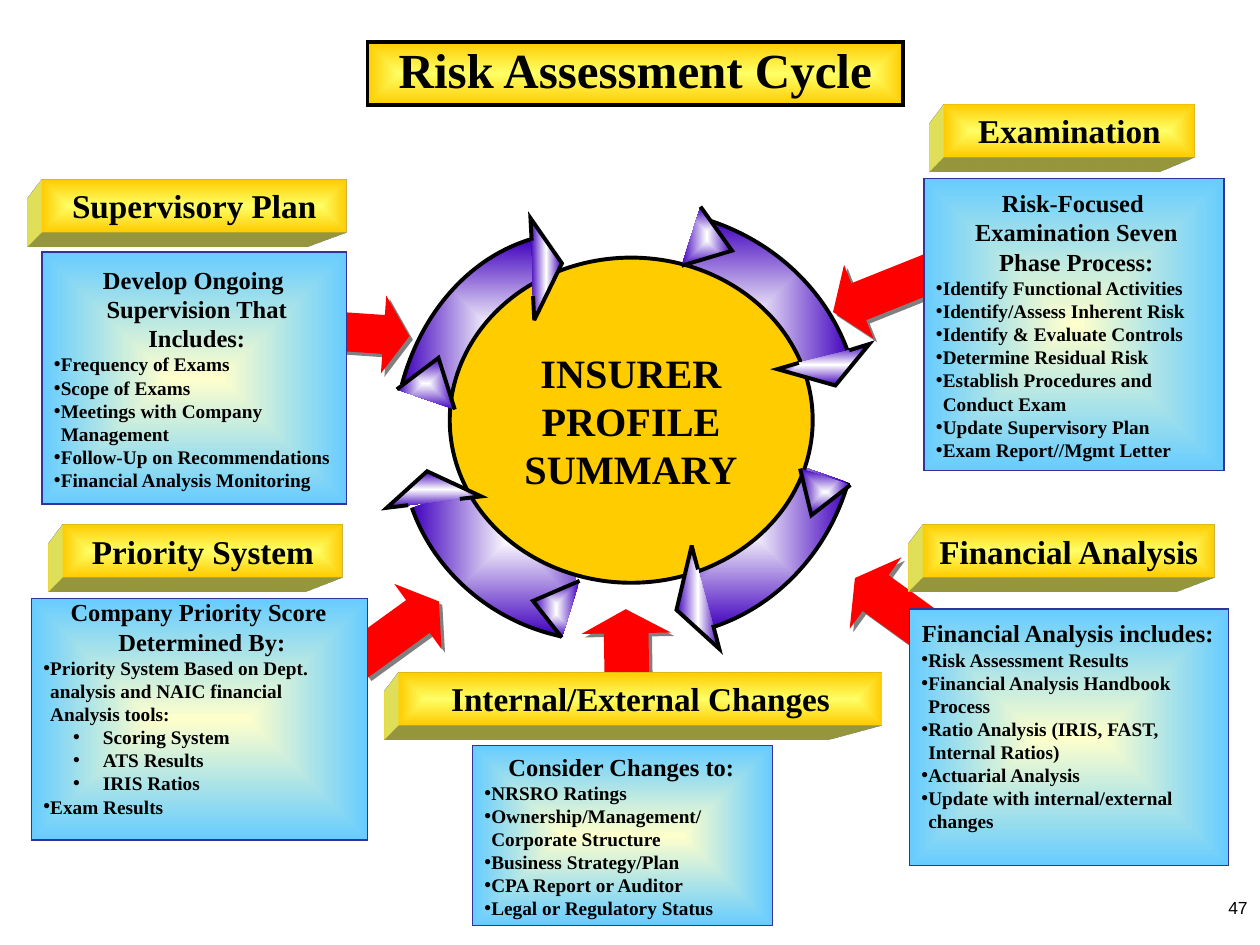
"""Build the Risk Assessment Cycle slide."""
from copy import deepcopy
from lxml.etree import SubElement
from pptx import Presentation
from pptx.dml.color import RGBColor
from pptx.enum.shapes import MSO_SHAPE
from pptx.enum.text import MSO_ANCHOR, PP_ALIGN
from pptx.oxml.ns import qn
from pptx.util import Pt

COLORS = {
    "black": "000000", "red": "FF0000", "gold": "FFCC00", "lemon": "FFFF66",
    "cream": "FFFFCC", "sky": "66CCFF", "navy": "333399", "white": "FFFFFF",
    "violet": "4000BD", "shadow": "808080",
}
SERIF = "Times New Roman"

presentation = Presentation()
presentation.slide_width, presentation.slide_height = Pt(720), Pt(540)
slide = presentation.slides.add_slide(presentation.slide_layouts[6])
shapes = slide.shapes


def paint(shape, fill, edge=None, line=None, width=2.25):
    """Fill a shape, shading from the fill at its centre to the edge colour."""
    shape.shadow.inherit = False
    if edge is None:
        shape.fill.solid()
        shape.fill.fore_color.rgb = RGBColor.from_string(COLORS[fill])
    else:
        shape.fill.gradient()
        for stop, color in zip(shape.fill.gradient_stops, (fill, edge)):
            stop.color.rgb = RGBColor.from_string(COLORS[color])
        gradient = shape._element.spPr.find(qn("a:gradFill"))
        gradient.remove(gradient.find(qn("a:lin")))
        path = SubElement(gradient, qn("a:path"), path="rect")
        SubElement(path, qn("a:fillToRect"), l="50000", t="50000", r="50000", b="50000")
    if line is None:
        shape.line.fill.background()
    else:
        shape.line.color.rgb = RGBColor.from_string(COLORS[line])
        shape.line.width = Pt(width)
        SubElement(shape._element.spPr.find(qn("a:ln")), qn("a:miter"), lim="800000")


def draw_outline(points, closed):
    """Draw a violet freeform through points given in points."""
    corners = [(Pt(x), Pt(y)) for x, y in points]
    builder = shapes.build_freeform(*corners[0])
    builder.add_line_segments(corners[1:], close=closed)
    shape = builder.convert_to_shape()
    paint(shape, "white", "violet", "black")
    return shape


labels = []
title = shapes.add_shape(MSO_SHAPE.RECTANGLE, Pt(210), Pt(24), Pt(306), Pt(36))
paint(title, "lemon", "gold", "black")
labels.append((title, [("Risk Assessment Cycle", 28, None)]))

arcs = [
    [(484.6, 275.8), (473, 316.1), (442.8, 347.8), (404.6, 359.3), (373, 236.9)],
    [(320.4, 363.6), (280.8, 355), (248.4, 326.9), (235.4, 290.2), (348.5, 253.4)],
    [(403.2, 125.3), (442.8, 137.5), (473.8, 167), (486, 205.2), (363.6, 241.9)],
    [(229.7, 219.6), (240.5, 179.3), (267.8, 147.6), (303.1, 136.8), (333.4, 257.8)],
]
for points in arcs:
    arc = draw_outline(points, True)
    sector = arc._element.spPr.find(".//" + qn("a:pathLst"))[0]
    segments = sector.findall(qn("a:lnTo"))
    curve = SubElement(sector, qn("a:cubicBezTo"))
    sector.insert(1, curve)
    for segment in segments[:3]:
        curve.append(segment[0])
        sector.remove(segment)
    rim = deepcopy(sector)
    for part in rim[2:]:
        rim.remove(part)
    rim.set("fill", "none")
    sector.set("stroke", "0")
    sector.addprevious(rim)

hub = shapes.add_shape(MSO_SHAPE.OVAL, Pt(257), Pt(147.2), Pt(207.4), Pt(185.8))
paint(hub, "gold", line="black")
labels.append((hub, [("INSURER PROFILE", 23, None), ("SUMMARY", 23, None)]))

arc_ends = [
    [(400.3, 118.1), (418.3, 143.3), (389.5, 151.9)],
    [(456.5, 207.4), (444.2, 211), (477.4, 220.3), (496.8, 196.6), (485.3, 200.2)],
    [(321.1, 364.3), (304.6, 343.4), (331.2, 331.9)],
    [(262.8, 285.1), (275, 283.7), (244.1, 269.3), (221, 290.2), (233.3, 288.7)],
    [(486, 277.2), (463.7, 294.5), (457.2, 267.8)],
    [(398.9, 325.4), (395.3, 311.8), (386.6, 348.5), (411.1, 370.8), (407.5, 357.1)],
    [(226.8, 222.5), (250.6, 204.5), (259.9, 234)],
    [(304.6, 169.2), (305.3, 182.9), (321.1, 150.5), (303.1, 124.6), (303.8, 137.5)],
]
for points in arc_ends:
    draw_outline(points, False)

red_arrows = [
    (MSO_SHAPE.LEFT_ARROW, 331, 349.6, 54, 51, 89.1, 0.27),
    (MSO_SHAPE.LEFT_ARROW, 473.8, 144, 62.6, 45.4, 338.2, 0.35),
    (MSO_SHAPE.LEFT_ARROW, 483.1, 321.8, 56.9, 50.4, 35.9, 0.29),
    (MSO_SHAPE.RIGHT_ARROW, 198, 337.7, 58.3, 46.1, 324.1, 0.32),
    (MSO_SHAPE.RIGHT_ARROW, 174.2, 167.8, 59.8, 44.6, 3.9, 0.33),
]
for kind, left, top, width, height, rotation, head in red_arrows:
    arrow = shapes.add_shape(kind, Pt(left), Pt(top), Pt(width), Pt(height))
    arrow.rotation = rotation
    arrow.adjustments[0], arrow.adjustments[1] = 0.5, head
    paint(arrow, "red")
    effects = arrow._element.spPr.find(qn("a:effectLst"))
    shadow = SubElement(effects, qn("a:outerShdw"), dist=str(Pt(2.8)), dir="2700000",
                        algn="ctr", rotWithShape="0")
    SubElement(shadow, qn("a:srgbClr"), val=COLORS["shadow"])

headers = [
    ("Internal/External Changes", 228, 384.2, 276),
    ("Examination", 539.8, 59.7, 142.6),
    ("Priority System", 36, 299.8, 160),
    ("Supervisory Plan", 24, 102.4, 174),
    ("Financial Analysis", 527.8, 299.8, 166),
]
for text, left, top, width in headers:
    header = shapes.add_shape(MSO_SHAPE.RECTANGLE, Pt(left), Pt(top), Pt(width), Pt(29.8))
    paint(header, "lemon", "gold")
    properties = header._element.spPr
    scene = SubElement(properties, qn("a:scene3d"))
    SubElement(scene, qn("a:camera"), prst="legacyPerspectiveBottomLeft")
    SubElement(scene, qn("a:lightRig"), rig="legacyFlat3", dir="b")
    solid = SubElement(properties, qn("a:sp3d"), extrusionH=str(Pt(67)),
                       prstMaterial="legacyMatte")
    extrusion = SubElement(solid, qn("a:extrusionClr"))
    SubElement(extrusion, qn("a:srgbClr"), val=COLORS["lemon"])
    labels.append((header, [(text, 19, None)]))

boxes = [
    (528, 102, 171.4, 167, 3.6, "Risk-Focused Examination Seven Phase Process:",
     ["Identify Functional Activities", "Identify/Assess Inherent Risk",
      "Identify & Evaluate Controls", "Determine Residual Risk",
      "Establish Procedures and Conduct Exam", "Update Supervisory Plan",
      "Exam Report//Mgmt Letter"]),
    (24, 144, 174.2, 144, 3.6, "Develop Ongoing Supervision That Includes:",
     ["Frequency of Exams", "Scope of Exams", "Meetings with Company Management",
      "Follow-Up on Recommendations", "Financial Analysis Monitoring"]),
    (18, 342, 192.2, 138, 16.8, "Company Priority Score Determined By:",
     ["Priority System Based on Dept. analysis and NAIC financial Analysis tools:",
      ["Scoring System", "ATS Results", "IRIS Ratios"], "Exam Results"]),
    (519.8, 348, 182.2, 146.5, 16.8, "Financial Analysis includes:",
     ["Risk Assessment Results", "Financial Analysis Handbook Process",
      "Ratio Analysis (IRIS, FAST, Internal Ratios)", "Actuarial Analysis",
      "Update with internal/external changes"]),
    (270, 426, 171.4, 103, 3.6, "Consider Changes to:",
     ["NRSRO Ratings", "Ownership/Management/ Corporate Structure",
      "Business Strategy/Plan", "CPA Report or Auditor", "Legal or Regulatory Status"]),
]
bottom_insets = {}
for left, top, width, height, bottom_inset, heading, items in boxes:
    box = shapes.add_shape(MSO_SHAPE.RECTANGLE, Pt(left), Pt(top), Pt(width), Pt(height))
    paint(box, "cream", "sky", "navy", 0.75)
    lines = [(heading, 14, None)]
    for item in items:
        if isinstance(item, list):
            lines += [(subitem, 11, 1) for subitem in item]
        else:
            lines.append((item, 11, 0))
    bottom_insets[box.shape_id] = bottom_inset
    labels.append((box, lines))

for shape, lines in labels:
    in_box = shape.shape_id in bottom_insets
    frame = shape.text_frame
    frame.word_wrap = True
    frame.vertical_anchor = MSO_ANCHOR.MIDDLE
    frame.margin_left = Pt(6.8)
    frame.margin_right = Pt(8 if in_box else 6.8)
    frame.margin_top = Pt(3.6)
    frame.margin_bottom = Pt(bottom_insets.get(shape.shape_id, 3.6))
    for index, (text, size, level) in enumerate(lines):
        paragraph = frame.paragraphs[0] if index == 0 else frame.add_paragraph()
        paragraph.alignment = PP_ALIGN.CENTER if level is None else PP_ALIGN.LEFT
        if in_box:
            margin, indent = (34, -17) if level == 1 else (3.9, -3.9)
            properties = paragraph._p.get_or_add_pPr()
            properties.set("marL", str(Pt(margin)))
            properties.set("indent", str(Pt(indent)))
        if level is not None:
            paragraph.level = level
            SubElement(properties, qn("a:buFont"), typeface="Arial")
            SubElement(properties, qn("a:buChar"), char="•")
        run = paragraph.add_run()
        run.text = text
        run.font.name, run.font.size, run.font.bold = SERIF, Pt(size), True
        run.font.color.rgb = RGBColor.from_string(COLORS["black"])
title.text_frame.paragraphs[0].line_spacing = 0.85

page_number = shapes.add_textbox(Pt(552), Pt(509), Pt(168), Pt(19.5))
page_number.text_frame.word_wrap = True
paragraph = page_number.text_frame.paragraphs[0]
paragraph.alignment = PP_ALIGN.RIGHT
run = paragraph.add_run()
run.text = "47"
run.font.name, run.font.size = "Arial", Pt(10)
run.font.color.rgb = RGBColor.from_string(COLORS["black"])

presentation.save("out.pptx")
